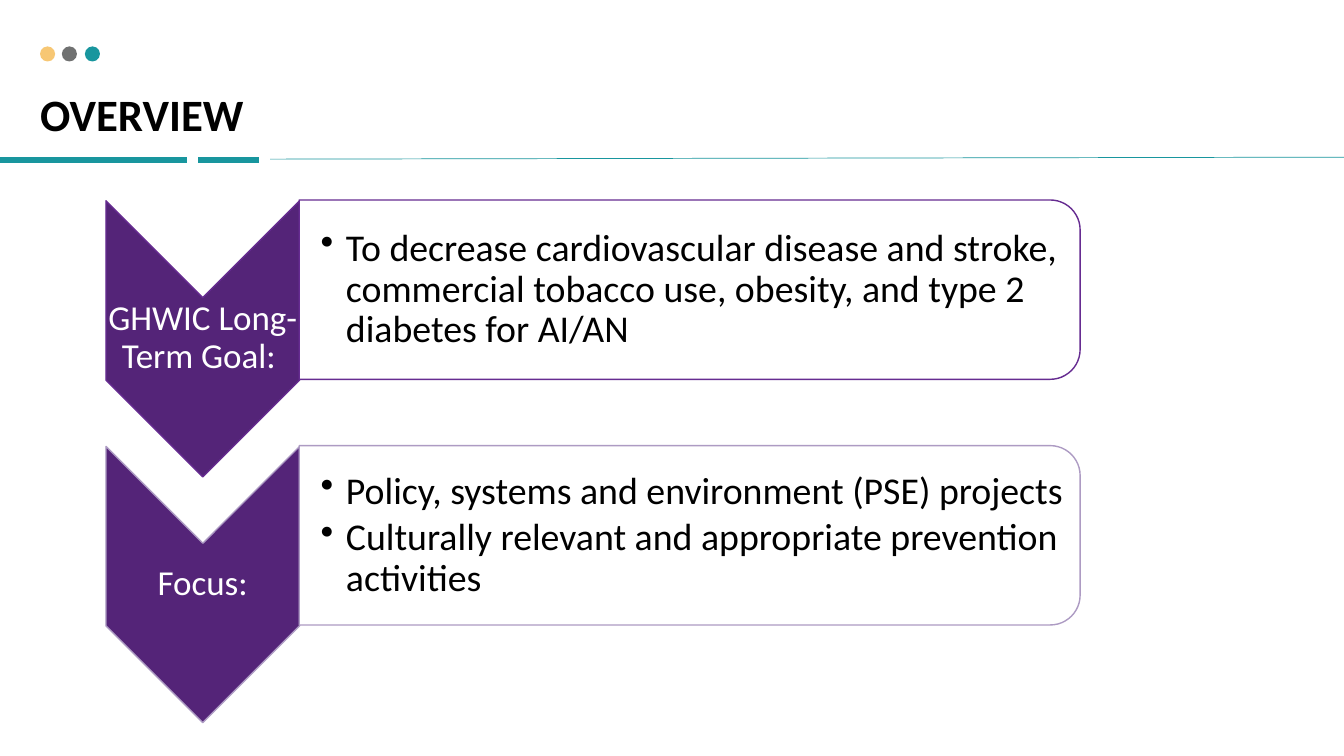
from lxml.etree import SubElement
from pptx import Presentation
from pptx.dml.color import RGBColor
from pptx.enum.shapes import MSO_CONNECTOR, MSO_SHAPE
from pptx.enum.text import MSO_ANCHOR, PP_ALIGN
from pptx.oxml.ns import qn
from pptx.util import Cm, Pt

TEAL = RGBColor(0x18, 0x96, 0x9E)
GOLD = RGBColor(0xF7, 0xC7, 0x74)
GRAY = RGBColor(0x70, 0x71, 0x71)
PURPLE = RGBColor(0x54, 0x24, 0x78)
VIOLET = RGBColor(0x66, 0x2C, 0x91)
LILAC = RGBColor(0xAD, 0x9B, 0xC3)
BLACK = RGBColor(0, 0, 0)
WHITE = RGBColor(255, 255, 255)


def add_filled_shape(kind, box, fill, outline=None, rotation=0):
    shape = slide.shapes.add_shape(kind, *map(Cm, box))
    shape.shadow.inherit = False
    shape.rotation = rotation
    shape.fill.solid()
    shape.fill.fore_color.rgb = fill
    if outline is None:
        shape.line.fill.background()
    else:
        shape.line.color.rgb = outline
        shape.line.width = Pt(1)


def add_text(box, lines, size, color, anchor, margin=0, left_margin=0,
             alignment=PP_ALIGN.LEFT, bold=False, bullet=False):
    frame = slide.shapes.add_textbox(*map(Cm, box)).text_frame
    frame_format = {
        "word_wrap": True,
        "vertical_anchor": anchor,
        "margin_left": Cm(left_margin),
        "margin_top": Cm(margin),
        "margin_right": Cm(margin),
        "margin_bottom": Cm(margin),
    }
    for name, value in frame_format.items():
        setattr(frame, name, value)
    frame.text = "\n".join(lines)
    for paragraph in frame.paragraphs:
        paragraph.alignment = alignment
        paragraph.line_spacing = 0.9
        font = paragraph.runs[0].font
        font.color.rgb = color
        font_format = {"name": "Calibri", "size": Pt(size), "bold": bold}
        for name, value in font_format.items():
            setattr(font, name, value)
        if bullet:
            paragraph.space_after = Pt(4)
            properties = paragraph._p.get_or_add_pPr()
            properties.set("marL", str(Cm(0.64)))
            properties.set("indent", str(Cm(-0.64)))
            SubElement(properties, qn("a:buChar")).set("char", "•")


presentation = Presentation()
presentation.slide_width = Cm(33.87)
presentation.slide_height = Cm(19.05)
slide = presentation.slides.add_slide(presentation.slide_layouts[6])

rules = [
    (-0.08, 4.04, 4.7, 4.04, 4.5),
    (5, 4.04, 6.53, 4.04, 4.5),
    (6.81, 4.01, 33.87, 3.96, 0.5),
]
for *ends, width in rules:
    connector = slide.shapes.add_connector(MSO_CONNECTOR.STRAIGHT, *map(Cm, ends))
    connector.line.color.rgb = TEAL
    connector.line.width = Pt(width)
    SubElement(connector._element.spPr, qn("a:effectLst"))

for left, color in [(1.01, GOLD), (1.56, GRAY), (2.14, TEAL)]:
    add_filled_shape(MSO_SHAPE.OVAL, (left, 1.17, 0.38, 0.38), color)

add_text((1.01, 0.69, 31.85, 2.87), ["OVERVIEW"], 32, BLACK,
         MSO_ANCHOR.BOTTOM, bold=True)

goals = [
    ("GHWIC Long-Term Goal: ", VIOLET, [
        "To decrease cardiovascular disease and stroke, commercial tobacco use, "
        "obesity, and type 2 diabetes for AI/AN",
    ]),
    ("Focus:", LILAC, [
        "Policy, systems and environment (PSE) projects",
        "Culturally relevant and appropriate prevention activities",
    ]),
]
for row, (label, outline, lines) in enumerate(goals):
    offset = row * 6.19
    add_filled_shape(MSO_SHAPE.CHEVRON, (1.63, 6.1 + offset, 6.96, 4.88),
                     PURPLE, outline, 90)
    add_text((2.67, 7.48 + offset, 4.88, 2.08), [label], 25, WHITE,
             MSO_ANCHOR.MIDDLE, 0.04, 0.04, PP_ALIGN.CENTER)
    add_filled_shape(MSO_SHAPE.ROUND_2_SAME_RECTANGLE,
                     (15.12, -2.54 + offset, 4.52, 19.68), WHITE, outline, 90)
    add_text((7.55, 5.26 + offset, 19.46, 4.09), lines, 27, BLACK,
             MSO_ANCHOR.MIDDLE, 0.04, 0.53, bullet=True)

presentation.save("out.pptx")
